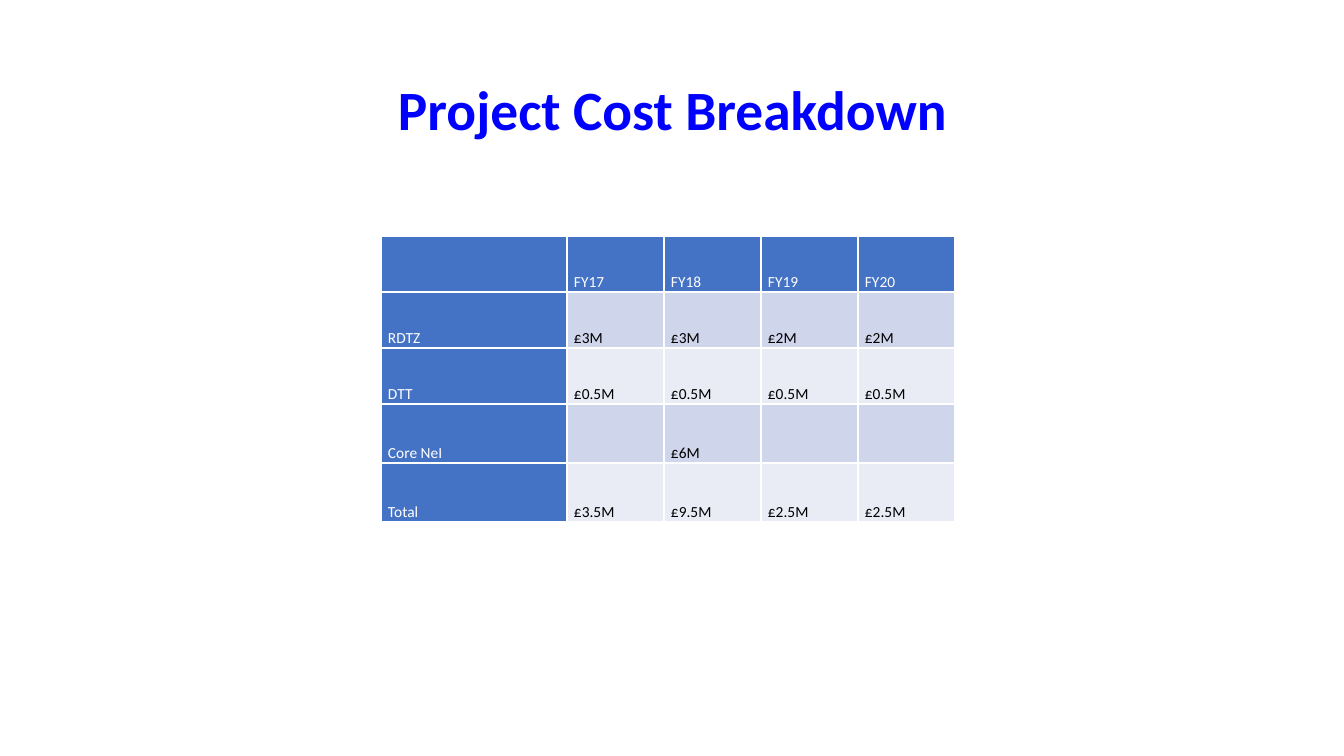
"""Build the project cost breakdown slide."""
from lxml import etree
from pptx import Presentation
from pptx.dml.color import RGBColor
from pptx.enum.text import MSO_ANCHOR, PP_ALIGN
from pptx.oxml.ns import qn
from pptx.util import Pt

MIDDLE, BOTTOM = MSO_ANCHOR.MIDDLE, MSO_ANCHOR.BOTTOM
CENTER = PP_ALIGN.CENTER
SCALE = 914400 / 100.8
FONT = "Calibri"
COLORS = {"title": "0000FF", "head": "4472C4", "odd": "CFD5EA",
          "even": "E9EBF5", "white": "FFFFFF", "black": "000000"}
COSTS = [
    ["", "FY17", "FY18", "FY19", "FY20"],
    ["RDTZ", "£3M", "£3M", "£2M", "£2M"],
    ["DTT", "£0.5M", "£0.5M", "£0.5M", "£0.5M"],
    ["Core NeI", "", "£6M", "", ""],
    ["Total", "£3.5M", "£9.5M", "£2.5M", "£2.5M"],
]
WIDTHS = [186] + [97] * 4
HEIGHTS = [56] * 3 + [59] * 2


def px(count):
    return round(count * SCALE)


def style(para, color, **form):
    for name, value in form.items():
        setattr(para.font, name, value)
    para.font.name = FONT
    para.font.color.rgb = RGBColor.from_string(COLORS[color])


deck = Presentation()
deck.slide_width, deck.slide_height = px(1344), px(756)
slide = deck.slides.add_slide(deck.slide_layouts[5])

title = slide.shapes.title
place = {"left": 93, "top": 40, "width": 1159, "height": 146}
for name, value in place.items():
    setattr(title, name, px(value))
title.text_frame.text = "Project Cost Breakdown"
title.text_frame.vertical_anchor = MIDDLE
para = title.text_frame.paragraphs[0]
para.alignment = CENTER
para.line_spacing = 0.9
style(para, "title", size=Pt(39.6), bold=True)

frame = slide.shapes.add_table(
    len(HEIGHTS), len(WIDTHS), px(381), px(236),
    px(sum(WIDTHS)), px(sum(HEIGHTS)))
table = frame.table
table.first_col = True
for col, width in zip(table.columns, WIDTHS):
    col.width = px(width)
for row, height in zip(table.rows, HEIGHTS):
    row.height = px(height)

inset = {"margin_left": px(7), "margin_right": px(7),
         "margin_top": 0, "margin_bottom": 0, "vertical_anchor": BOTTOM}
for r, costs in enumerate(COSTS):
    for c, text in enumerate(costs):
        cell = table.cell(r, c)
        for name, value in inset.items():
            setattr(cell, name, value)
        head = r == 0 or c == 0
        props = cell._tc.get_or_add_tcPr()
        for side in ("lnL", "lnR", "lnT", "lnB"):
            line = etree.SubElement(props, qn(f"a:{side}"), w=str(Pt(1)))
            solid = etree.SubElement(line, qn("a:solidFill"))
            etree.SubElement(solid, qn("a:srgbClr"), val=COLORS["white"])
        band = "head" if head else "odd" if r % 2 else "even"
        cell.fill.solid()
        cell.fill.fore_color.rgb = RGBColor.from_string(COLORS[band])
        if text:
            cell.text = text
            para = cell.text_frame.paragraphs[0]
            para.line_spacing = 1.15
            style(para, "white" if head else "black", size=Pt(11), bold=False)

deck.save("out.pptx")
